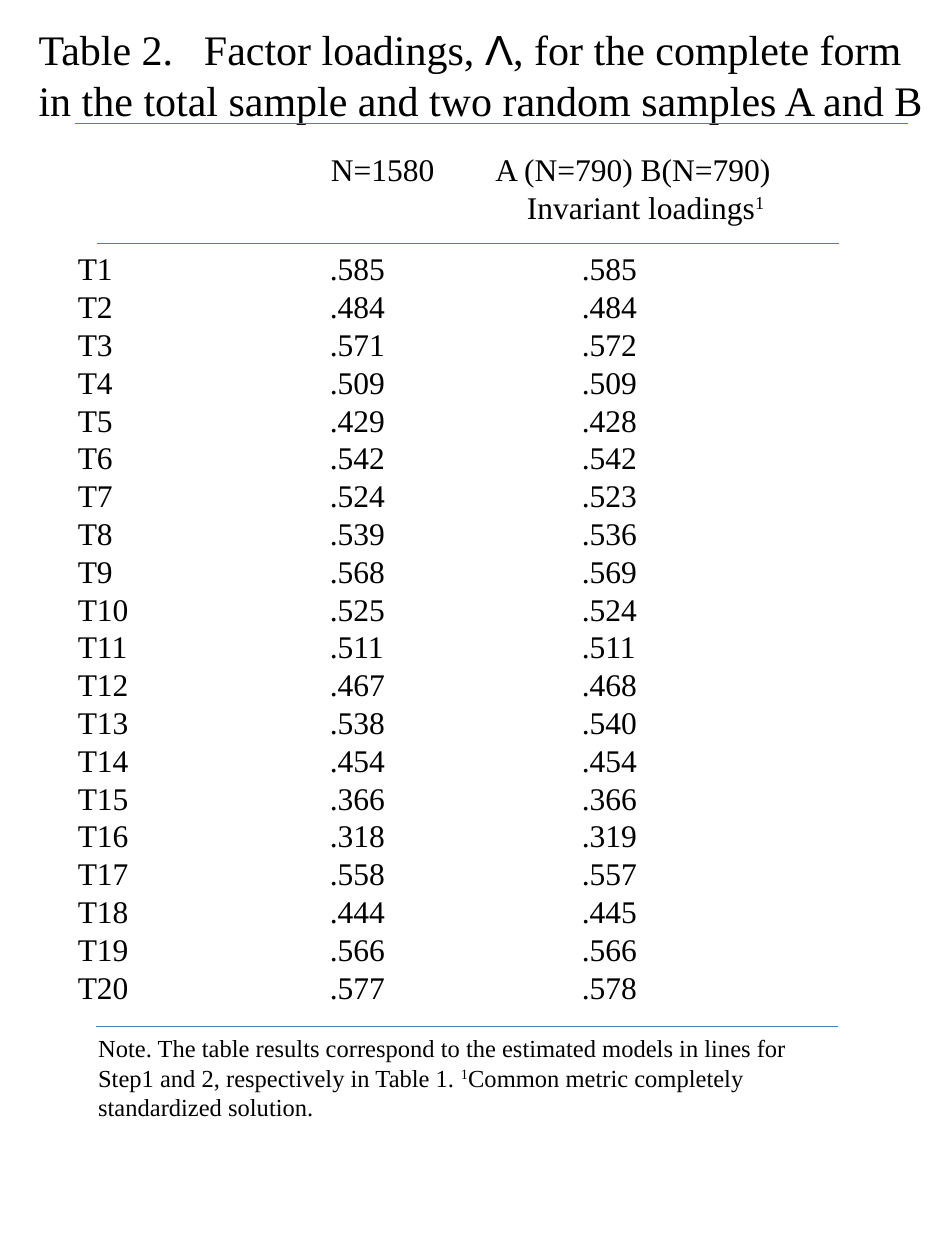
from lxml import etree
from pptx import Presentation
from pptx.dml.color import RGBColor
from pptx.enum.shapes import MSO_CONNECTOR
from pptx.oxml.ns import qn
from pptx.util import Pt

STRAIGHT = MSO_CONNECTOR.STRAIGHT
SERIF, SANS = "Times New Roman", "Arial"
COLORS = {"text": "000000", "rule": "4B7EBC"}

TOTAL = [".585", ".484", ".571", ".509", ".429", ".542", ".524", ".539", ".568", ".525",
         ".511", ".467", ".538", ".454", ".366", ".318", ".558", ".444", ".566", ".577"]
SPLIT = [".585", ".484", ".572", ".509", ".428", ".542", ".523", ".536", ".569", ".524",
         ".511", ".468", ".540", ".454", ".366", ".319", ".557", ".445", ".566", ".578"]


def set_tabs(para, stops):
    props = para._p.get_or_add_pPr()
    tabs = etree.SubElement(props, qn("a:tabLst"))
    for stop in stops:
        etree.SubElement(tabs, qn("a:tab"), pos=str(Pt(stop)), algn="l")


def add_text(slide, box, size, lines):
    """Each line is (tab stops, runs); a run is (text, style), style "sans", "super" or ""."""
    frame = slide.shapes.add_textbox(*map(Pt, box)).text_frame
    frame.word_wrap = True
    for i, (stops, runs) in enumerate(lines):
        para = frame.add_paragraph() if i else frame.paragraphs[0]
        if stops:
            set_tabs(para, stops)
        for text, style in runs:
            run = para.add_run()
            run.text = text
            run.font.size = Pt(size)
            run.font.name = SANS if style == "sans" else SERIF
            run.font.color.rgb = RGBColor.from_string(COLORS["text"])
            if style == "super":
                run._r.get_or_add_rPr().set("baseline", "30000")


def add_rule(slide, left, top, width):
    line = slide.shapes.add_connector(
        STRAIGHT, Pt(left), Pt(top), Pt(left + width), Pt(top))
    line.line.color.rgb = RGBColor.from_string(COLORS["rule"])
    line.line.width = Pt(0.75)
    etree.SubElement(line._element.spPr, qn("a:effectLst"))


def add_title(slide, box):
    left, top, _, _ = box
    add_text(slide, box, 24, [
        ([94.5], [("Table 2.\tFactor loadings, ", ""), ("Λ", "sans"),
                  (", for the complete form", "")]),
        ([], [("in the total sample and two random samples A and B", "")]),
    ])
    add_rule(slide, left + 28, top + 60.5, 476)


def add_head(slide, box):
    add_text(slide, box, 18, [
        ([94], [("N=1580\tA (N=790) B(N=790)", "")]),
        ([112], [("\tInvariant loadings", ""), ("1", "super")]),
    ])


def add_loadings(slide, box):
    left, top, _, height = box
    rows = zip(TOTAL, SPLIT)
    add_text(slide, box, 18, [
        ([144, 288], [(f"T{n}\t{total}\t{split}", "")])
        for n, (total, split) in enumerate(rows, 1)])
    add_rule(slide, left + 18, top, 424)
    add_rule(slide, left + 17.3, top + height + 4, 424)


def add_note(slide, box):
    add_text(slide, box, 14, [
        ([], [("Note. The table results correspond to the estimated models in lines for", "")]),
        ([], [("Step1 and 2, respectively in Table 1. ", ""), ("1", "super"),
              ("Common metric completely", "")]),
        ([], [("standardized solution.", "")]),
    ])


def main():
    deck = Presentation()
    deck.slide_width, deck.slide_height = Pt(540), Pt(720)
    slide = deck.slides.add_slide(deck.slide_layouts[6])
    add_title(slide, (15, 10, 562, 65.5))
    add_loadings(slide, (37.4, 139, 471, 443.5))
    add_note(slide, (49, 587, 415, 58))
    add_head(slide, (182, 82, 269, 51))
    deck.save("out.pptx")


if __name__ == "__main__":
    main()
